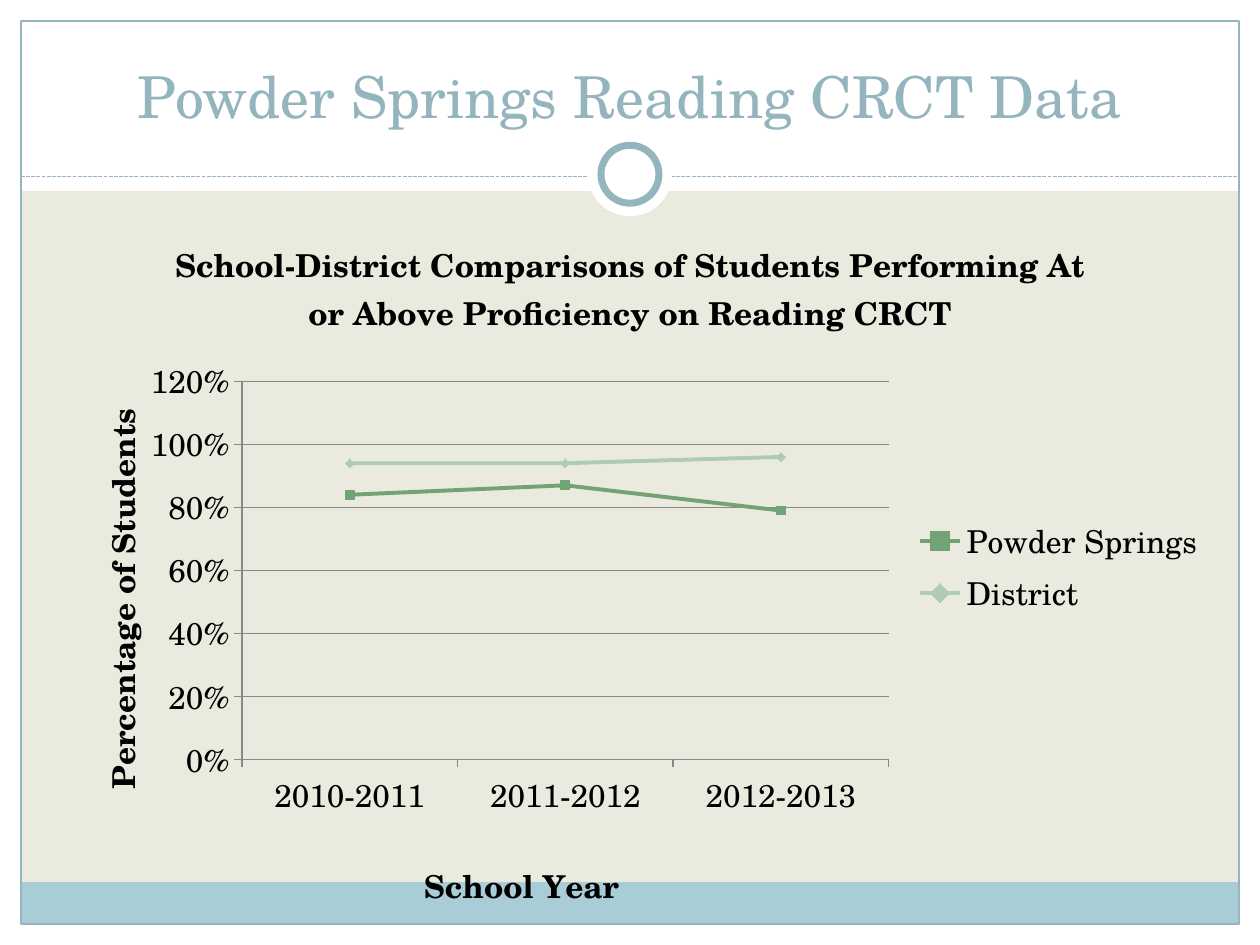
from lxml import etree
from pptx import Presentation
from pptx import util as u
from pptx.chart.data import CategoryChartData
from pptx.dml.color import RGBColor
from pptx.enum import chart as ch, dml, shapes, text
from pptx.oxml.ns import qn

COLS, ROWS = 60, 45
CELL = u.Inches(10) // COLS
FONT = "TeX Gyre Schola"
COLORS = {"paper": "EAEBDE", "white": "FFFFFF", "band": "A8CDD7", "accent": "94B5BE",
          "black": "000000", "grid": "888888", "school": "72A376", "district": "B0CCB0"}


def rgb(name):
    return RGBColor.from_string(COLORS[name])


def cells(*values):
    return [round(v * CELL) for v in values]


def set_font(font, size, color, bold=False):
    font.name, font.size, font.bold = FONT, u.Pt(size), bold
    font.color.rgb = rgb(color)


def add_block(slide, box, fill=None, line=None, width=0.75, kind=shapes.MSO_SHAPE.RECTANGLE):
    sp = slide.shapes.add_shape(kind, *cells(*box))
    sp.shadow.inherit = False
    if fill:
        sp.fill.solid()
        sp.fill.fore_color.rgb = rgb(fill)
    else:
        sp.fill.background()
    if line:
        sp.line.color.rgb = rgb(line)
        sp.line.width = u.Pt(width)
    else:
        sp.line.fill.background()


def add_frame(slide, box):
    """Margins, header, footer band and outline; box is the area inside the margins."""
    x, y, w, h = box
    for margin in ((0, y + h, COLS, y), (0, 0, COLS, 9.1),
                   (0, 0, x, ROWS), (x + w, 0, x, ROWS)):
        add_block(slide, margin, "white")
    add_block(slide, (x, y + h - 2, w, 2), "band")
    add_block(slide, box, line="accent")


def add_divider(slide, box):
    """Dashed rule with a ring at its middle; box has the height of the ring's halo."""
    x, y, w, h = box
    rule = y + h / 2 + 0.1
    cx = slide.shapes.add_connector(shapes.MSO_CONNECTOR.STRAIGHT,
                                    *cells(x, rule, x + w, rule))
    cx.line.color.rgb = rgb("accent")
    cx.line.width = u.Pt(0.75)
    cx.line.dash_style = dml.MSO_LINE.SQUARE_DOT
    etree.SubElement(cx._element.spPr, qn("a:effectLst"))
    for size, line in ((h, None), (h * 0.69, "accent")):
        ring = (x + (w - size) / 2, y + (h - size) / 2, size, size)
        add_block(slide, ring, "white", line, 4, shapes.MSO_SHAPE.OVAL)


def add_title(slide, box):
    tf = slide.shapes.add_textbox(*cells(*box)).text_frame
    tf.word_wrap = True
    tf.vertical_anchor = text.MSO_ANCHOR.BOTTOM
    tf.text = "Powder Springs Reading CRCT Data"
    p = tf.paragraphs[0]
    p.alignment = text.PP_ALIGN.CENTER
    set_font(p.runs[0].font, 33, "accent")


def set_layout(parent, before, **shares):
    """Place a chart part at shares of the chart's size."""
    for old in parent.findall(qn("c:layout")):
        parent.remove(old)
    layout = etree.Element(qn("c:layout"))
    manual = etree.SubElement(layout, qn("c:manualLayout"))
    if "w" in shares:
        etree.SubElement(manual, qn("c:layoutTarget")).set("val", "inner")
    for key in "xy":
        etree.SubElement(manual, qn(f"c:{key}Mode")).set("val", "edge")
    for key, share in shares.items():
        etree.SubElement(manual, qn(f"c:{key}")).set("val", str(share))
    parent.insert(0, layout) if before is None else before.addnext(layout)


def set_heading(owner, wording):
    tf = (owner.chart_title if hasattr(owner, "chart_title") else owner.axis_title).text_frame
    tf.text = wording
    set_font(tf.paragraphs[0].runs[0].font, 18, "black", True)


def style_axis(axis, wording, x, y):
    set_heading(axis, wording)
    title = axis.axis_title._element
    set_layout(title, title.find(qn("c:tx")), x=x, y=y)
    axis.major_tick_mark = ch.XL_TICK_MARK.OUTSIDE
    axis.minor_tick_mark = ch.XL_TICK_MARK.NONE
    axis.format.line.color.rgb = rgb("grid")


def add_score_chart(slide, box):
    data = CategoryChartData(number_format="0%")
    data.categories = ["2010-2011", "2011-2012", "2012-2013"]
    data.add_series("Powder Springs", (0.84, 0.87, 0.79))
    data.add_series("District", (0.94, 0.94, 0.96))
    chart = slide.shapes.add_chart(ch.XL_CHART_TYPE.LINE_MARKERS, *cells(*box), data).chart
    set_font(chart.font, 18, "black")
    set_heading(chart, "School-District Comparisons of Students Performing At "
                       "or Above Proficiency on Reading CRCT")
    chart.has_legend = True
    chart.legend.position = ch.XL_LEGEND_POSITION.RIGHT
    chart.legend.include_in_layout = False

    style_axis(chart.category_axis, "School Year", 0.32, 0.9)
    values = chart.value_axis
    style_axis(values, "Percentage of Students", 0.04, 0.27)
    values.minimum_scale, values.maximum_scale, values.major_unit = 0, 1.2, 0.2
    values.tick_labels.number_format = "0%"
    values.tick_labels.number_format_is_linked = False
    values.major_gridlines.format.line.color.rgb = rgb("grid")
    set_layout(chart._chartSpace.chart.plotArea, None, x=0.17, y=0.24, w=0.55, h=0.53)

    plot = chart.plots[0]
    plot.vary_by_categories = False
    markers = ch.XL_MARKER_STYLE.SQUARE, ch.XL_MARKER_STYLE.DIAMOND
    for series, color, marker in zip(plot.series, ("school", "district"), markers):
        series.smooth = False
        series.format.line.color.rgb = rgb(color)
        series.format.line.width = u.Pt(2.25)
        series.marker.style, series.marker.size = marker, 5
        series.marker.format.fill.solid()
        series.marker.format.fill.fore_color.rgb = rgb(color)
        series.marker.format.line.color.rgb = rgb(color)


def main():
    prs = Presentation()
    prs.slide_width, prs.slide_height = cells(COLS, ROWS)
    slide = prs.slides.add_slide(prs.slide_layouts[6])
    slide.background.fill.solid()
    slide.background.fill.fore_color.rgb = rgb("paper")
    add_frame(slide, (1, 1, 58, 43))
    add_divider(slide, (1, 6.3, 58, 4))
    add_title(slide, (2, 1.5, 56, 5))
    add_score_chart(slide, (2, 10, 56, 34))
    prs.save("out.pptx")


if __name__ == "__main__":
    main()
